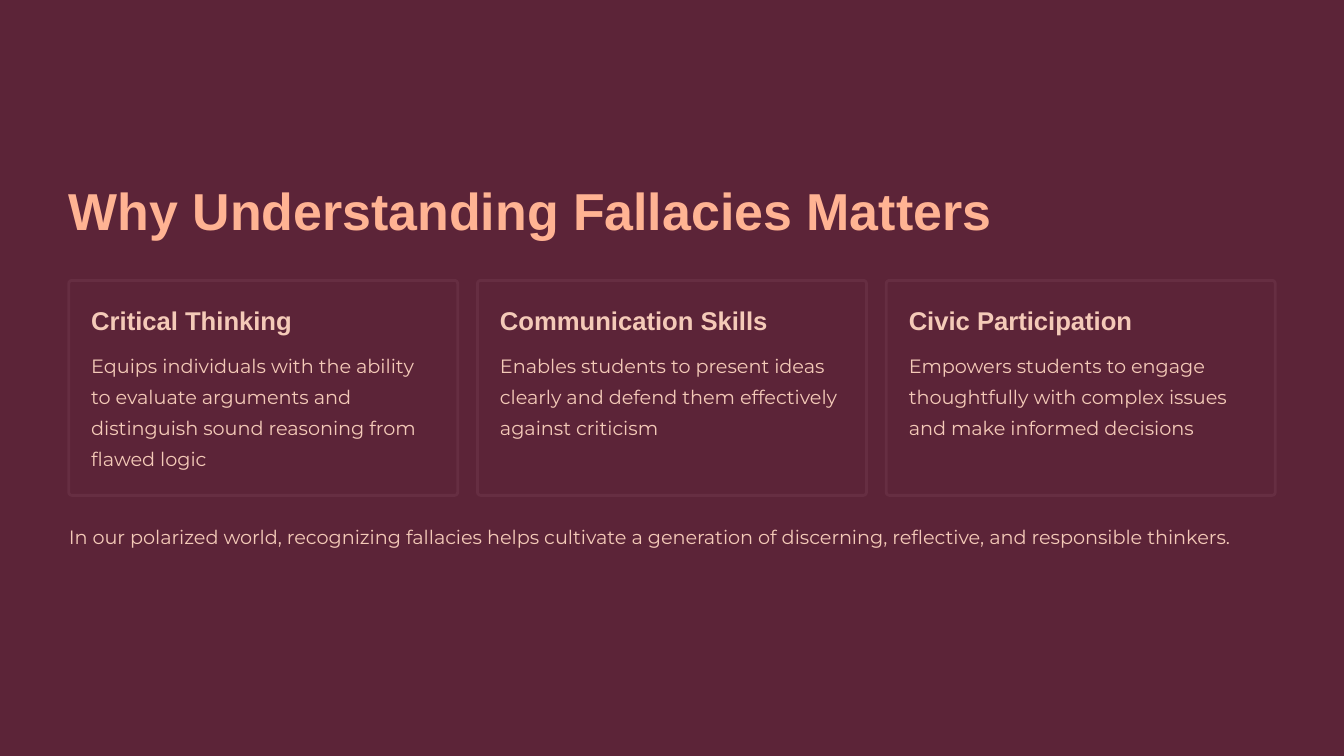
from pptx import Presentation
from pptx.dml.color import RGBColor
from pptx.enum.shapes import MSO_SHAPE
from pptx.enum.text import MSO_ANCHOR, PP_ALIGN
from pptx.util import Cm, Pt

COLORS = {"background": "5C2438", "border": "662E42", "title": "FFB393", "text": "F4CAB8"}
LEFT, CARD_TOP = 2.08, 8.48
CARD_W, CARD_H, PITCH = 11.76, 6.5, 12.36
PAD = 0.68
CARDS = [
    ("Critical Thinking",
     "Equips individuals with the ability to evaluate arguments and distinguish sound reasoning from flawed logic"),
    ("Communication Skills",
     "Enables students to present ideas clearly and defend them effectively against criticism"),
    ("Civic Participation",
     "Empowers students to engage thoughtfully with complex issues and make informed decisions"),
]


class Deck:
    heading_font = "Arial"
    body_font = "Montserrat"

    def __init__(self, width, height):
        self.prs = Presentation()
        self.prs.slide_width, self.prs.slide_height = Cm(width), Cm(height)
        self.s = self.prs.slides.add_slide(self.prs.slide_layouts[6])
        fill = self.s.background.fill
        fill.solid()
        fill.fore_color.rgb = self.color("background")

    def color(self, name):
        return RGBColor.from_string(COLORS[name])

    def text(self, text, x, y, w, h, size, spacing, font, color="text", bold=False, wrap=True):
        tf = self.s.shapes.add_textbox(Cm(x), Cm(y), Cm(w), Cm(h)).text_frame
        tf.margin_left = tf.margin_right = tf.margin_top = tf.margin_bottom = 0
        tf.word_wrap = wrap
        tf.vertical_anchor = MSO_ANCHOR.TOP
        tf.text = text
        p = tf.paragraphs[0]
        p.alignment = PP_ALIGN.LEFT
        p.line_spacing = Pt(spacing)
        r = p.runs[0]
        r.font.name, r.font.size, r.font.bold = font, Pt(size), bold
        r.font.color.rgb = self.color(color)

    def heading(self, text, x, y, w, h, size, spacing, color="text"):
        self.text(text, x, y, w, h, size, spacing, self.heading_font, color, bold=True, wrap=False)

    def body(self, text, x, y, w, h):
        self.text(text, x, y, w, h, 16.5, 26.5, self.body_font)

    def card(self, title, text, x, y):
        sp = self.s.shapes.add_shape(MSO_SHAPE.ROUNDED_RECTANGLE, Cm(x), Cm(y), Cm(CARD_W), Cm(CARD_H))
        sp.adjustments[0] = 0.014
        sp.shadow.inherit = False
        sp.fill.solid()
        sp.fill.fore_color.rgb = self.color("background")
        sp.line.color.rgb = self.color("border")
        sp.line.width = Pt(2.4)
        inner = CARD_W - 2 * PAD
        self.heading(title, x + PAD, y + PAD, inner, 1, 22, 28)
        self.body(text, x + PAD, y + 2.01, inner, 3.8)


def main():
    deck = Deck(40.64, 22.86)
    deck.heading("Why Understanding Fallacies Matters", LEFT, 5.31, 28.63, 1.98, 44.5, 56, "title")
    for i, (title, text) in enumerate(CARDS):
        deck.card(title, text, LEFT + i * PITCH, CARD_TOP)
    deck.body("In our polarized world, recognizing fallacies helps cultivate a generation of discerning, "
              "reflective, and responsible thinkers.", LEFT, 15.65, 2 * PITCH + CARD_W, 1.9)
    deck.prs.save("out.pptx")


if __name__ == "__main__":
    main()
